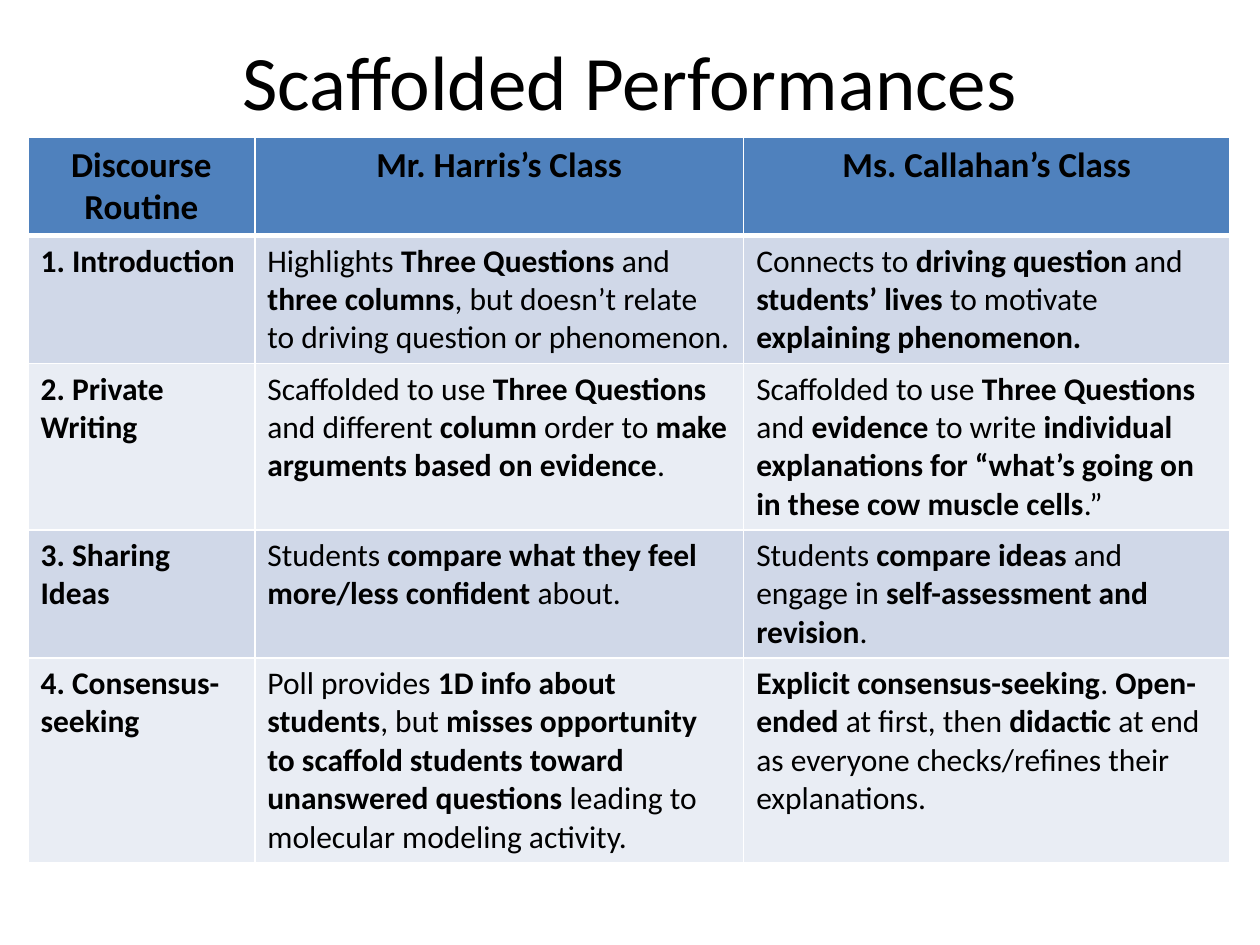
from lxml import etree
from pptx import Presentation
from pptx.dml.color import RGBColor
from pptx.enum.text import MSO_ANCHOR, PP_ALIGN
from pptx.oxml.ns import qn
from pptx.util import Pt

CENTER, LEFT = PP_ALIGN.CENTER, PP_ALIGN.LEFT
MIDDLE = MSO_ANCHOR.MIDDLE
TITLE_ONLY = 5

HEADER = ["Discourse Routine", "Mr. Harris’s Class", "Ms. Callahan’s Class"]
# Double asterisks switch bold on and off.
ROUTINES = [
    ["**1. Introduction**",
     "Highlights **Three Questions** and **three columns**, but doesn’t relate to "
     "driving question or phenomenon.",
     "Connects to **driving question **and **students’ lives **to motivate "
     "**explaining phenomenon.**"],
    ["**2. Private Writing**",
     "Scaffolded to use **Three Questions **and different **column **order to "
     "**make arguments based on evidence**.",
     "Scaffolded to use **Three Questions **and **evidence** to write **individual "
     "explanations for “what’s going on in these cow muscle cells**.”"],
    ["**3. Sharing Ideas**",
     "Students **compare what they feel more/less confident **about.",
     "Students **compare ideas** and engage in **self-assessment and revision**."],
    ["**4. Consensus-seeking**",
     "Poll provides **1D info about students**, but **misses opportunity to scaffold "
     "students toward unanswered questions **leading to molecular modeling activity.",
     "**Explicit consensus-seeking**. **Open-ended **at first, then **didactic** at end "
     "as everyone checks/refines their explanations."],
]
COL_WIDTHS = [129.6, 279.4, 277.9]
ROW_HEIGHTS = [55, 73, 95, 73, 116]


def rgb(hex_color):
    return RGBColor.from_string(hex_color)


class SlideBuilder:
    font = "Calibri"
    ink = "000000"
    rule = "FFFFFF"
    header_fill = "4F81BD"
    band_fills = ["D0D8E8", "E9EDF4"]

    def __init__(self, s):
        self.s = s

    def add_text(self, tf, text, size, align):
        """Fill the first paragraph, one run for each bold or plain part."""
        p = tf.paragraphs[0]
        p.alignment = align
        for i, part in enumerate(text.split("**")):
            if part:
                r = p.add_run()
                r.text = part
                r.font.name = self.font
                r.font.size = Pt(size)
                r.font.bold = i % 2 == 1
                r.font.color.rgb = rgb(self.ink)

    def title(self, text, x, y, w, h):
        sp = self.s.shapes.title
        sp.left, sp.top, sp.width, sp.height = Pt(x), Pt(y), Pt(w), Pt(h)
        sp.text_frame.vertical_anchor = MIDDLE
        self.add_text(sp.text_frame, text, 44, CENTER)

    def borders(self, cell, widths):
        tc_pr = cell._tc.get_or_add_tcPr()
        for side, width in widths.items():
            ln = etree.SubElement(tc_pr, qn(f"a:ln{side}"), w=str(Pt(width)))
            fill = etree.SubElement(ln, qn("a:solidFill"))
            etree.SubElement(fill, qn("a:srgbClr"), val=self.rule)

    def cell(self, cell, text, size, align, fill, top=1, bottom=1):
        self.borders(cell, {"L": 1, "R": 1, "T": top, "B": bottom})
        cell.fill.solid()
        cell.fill.fore_color.rgb = rgb(fill)
        self.add_text(cell.text_frame, text, size, align)

    def table(self, header, rows, x, y, col_widths, row_heights):
        frame = self.s.shapes.add_table(
            len(rows) + 1, len(header), Pt(x), Pt(y),
            Pt(sum(col_widths)), Pt(sum(row_heights)))
        table = frame.table
        for col, width in zip(table.columns, col_widths):
            col.width = Pt(width)
        for row, height in zip(table.rows, row_heights):
            row.height = Pt(height)
        for c, text in enumerate(header):
            self.cell(table.cell(0, c), f"**{text}**", 20, CENTER,
                      self.header_fill, bottom=3)
        for i, texts in enumerate(rows):
            for c, text in enumerate(texts):
                self.cell(table.cell(i + 1, c), text, 18, LEFT,
                          self.band_fills[i % 2], top=1 if i else 3)


def main():
    prs = Presentation()
    prs.slide_width, prs.slide_height = Pt(720), Pt(540)
    slide = SlideBuilder(prs.slides.add_slide(prs.slide_layouts[TITLE_ONLY]))
    slide.title("Scaffolded Performances", 0, 0.7, 720, 90)
    slide.table(HEADER, ROUTINES, 16, 78.5, COL_WIDTHS, ROW_HEIGHTS)
    prs.save("out.pptx")


if __name__ == "__main__":
    main()
